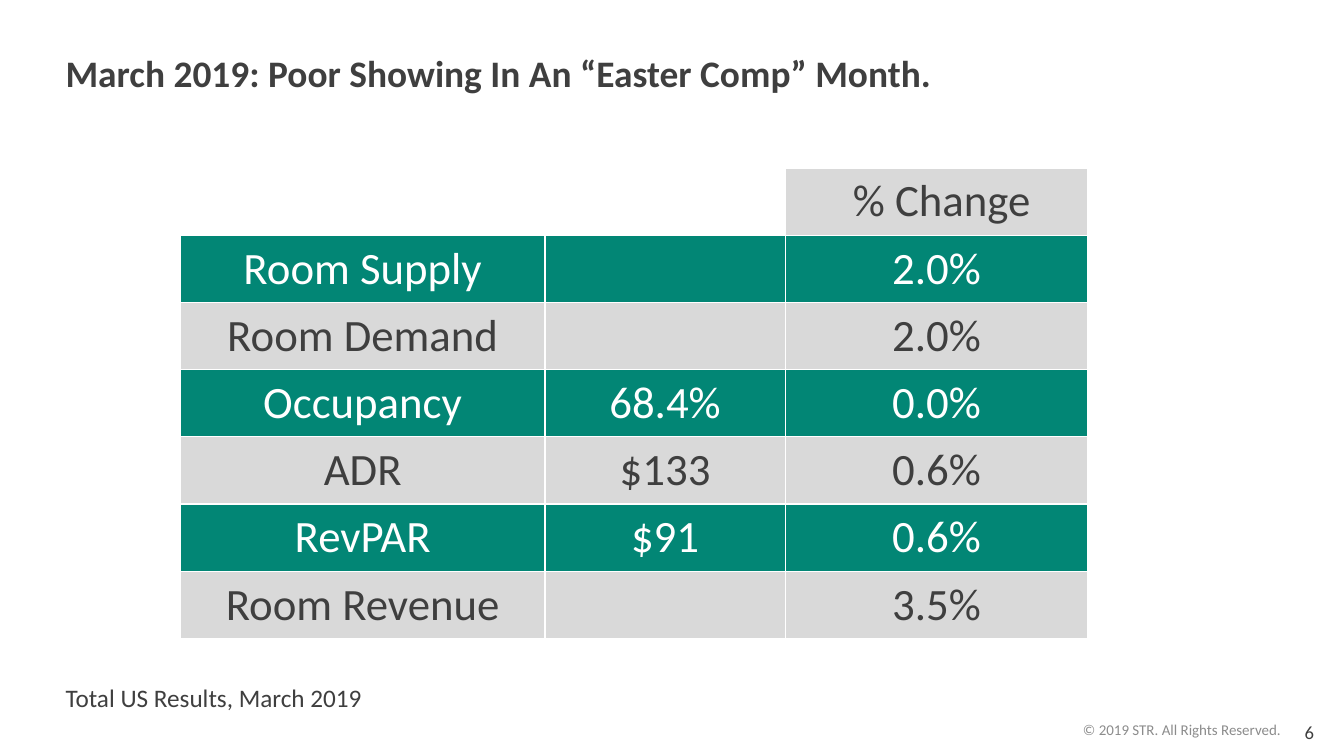
import pptx
import pptx.dml.color
import pptx.enum.text
import pptx.oxml
import pptx.oxml.ns
import pptx.util

PX = 9525  # EMU per px, 96 px to the inch
FONT = "Calibri"
DARK, WHITE, GREEN, GREY, MUTED = "3F3F3F", "FFFFFF", "028675", "D9D9D9", "8C8C8C"
ALIGN = pptx.enum.text.PP_ALIGN

COLUMN_WIDTHS = [347, 229, 288]
ROW_HEIGHT = 64
RESULTS = [
    ("", "", "% Change"),
    ("Room Supply", "", "2.0%"),
    ("Room Demand", "", "2.0%"),
    ("Occupancy", "68.4%", "0.0%"),
    ("ADR", "$133", "0.6%"),
    ("RevPAR", "$91", "0.6%"),
    ("Room Revenue", "", "3.5%"),
]


def px(length):
    return pptx.util.Emu(length * PX)


def rgb(hex_color):
    return pptx.dml.color.RGBColor.from_string(hex_color)


def style(paragraph, size, color, align=ALIGN.LEFT, bold=False):
    paragraph.alignment = align
    paragraph.font.name = FONT
    paragraph.font.size = pptx.util.Pt(size)
    paragraph.font.bold = bold
    paragraph.font.color.rgb = rgb(color)


def add_text(slide, box, text, size, color=DARK, align=ALIGN.LEFT, bold=False):
    frame = slide.shapes.add_textbox(*map(px, box)).text_frame
    frame.word_wrap = True
    frame.text = text
    style(frame.paragraphs[0], size, color, align, bold)
    return frame


def add_borders(cell, color):
    properties = cell._tc.get_or_add_tcPr()
    for index, side in enumerate(("lnL", "lnR", "lnT", "lnB")):
        properties.insert(index, pptx.oxml.parse_xml(
            f'<a:{side} {pptx.oxml.ns.nsdecls("a")} w="12700"><a:solidFill>'
            f'<a:srgbClr val="{color}"/></a:solidFill></a:{side}>'))


def fill_cell(cell, text, fill, color):
    cell.margin_left = cell.margin_right = px(12)
    cell.margin_top = cell.margin_bottom = px(6)
    cell.vertical_anchor = pptx.enum.text.MSO_ANCHOR.MIDDLE
    if fill:
        cell.fill.solid()
        cell.fill.fore_color.rgb = rgb(fill)
    else:
        cell.fill.background()
    add_borders(cell, WHITE)
    cell.text = text
    style(cell.text_frame.paragraphs[0], 32, color, ALIGN.CENTER)


def add_results(slide, left, top):
    table = slide.shapes.add_table(
        len(RESULTS), len(COLUMN_WIDTHS), px(left), px(top),
        px(sum(COLUMN_WIDTHS)), px(ROW_HEIGHT * len(RESULTS))).table
    table.first_row = table.horz_banding = False
    for column, width in zip(table.columns, COLUMN_WIDTHS):
        column.width = px(width)
    for r, values in enumerate(RESULTS):
        table.rows[r].height = px(ROW_HEIGHT)
        fill, color = (GREEN, WHITE) if r % 2 else (GREY, DARK)
        for c, text in enumerate(values):
            blank_header = r == 0 and not text
            fill_cell(table.cell(r, c), text, None if blank_header else fill, color)
    # The header label sits slightly right of centre
    table.cell(0, 2).margin_left = px(22)


def add_footer(slide, left, top):
    rights = add_text(slide, (left, top, 336, 27),
                      "© 2019 STR. All Rights Reserved.", 10.7, MUTED, ALIGN.RIGHT)
    rights.margin_right = px(12)
    add_text(slide, (left + 337, top, 55, 32), "6", 13.3)


def main():
    deck = pptx.Presentation()
    deck.slide_width, deck.slide_height = px(1280), px(720)
    slide = deck.slides.add_slide(deck.slide_layouts[6])

    # Title
    add_text(slide, (53, 43, 1105, 80),
             "March 2019: Poor Showing In An “Easter Comp” Month.", 26.7, bold=True)
    # Results table
    add_results(slide, 172, 160)
    # Source line and footer
    add_text(slide, (53, 645, 796, 38), "Total US Results, March 2019", 18)
    add_footer(slide, 896, 682)

    deck.save("out.pptx")


if __name__ == "__main__":
    main()
